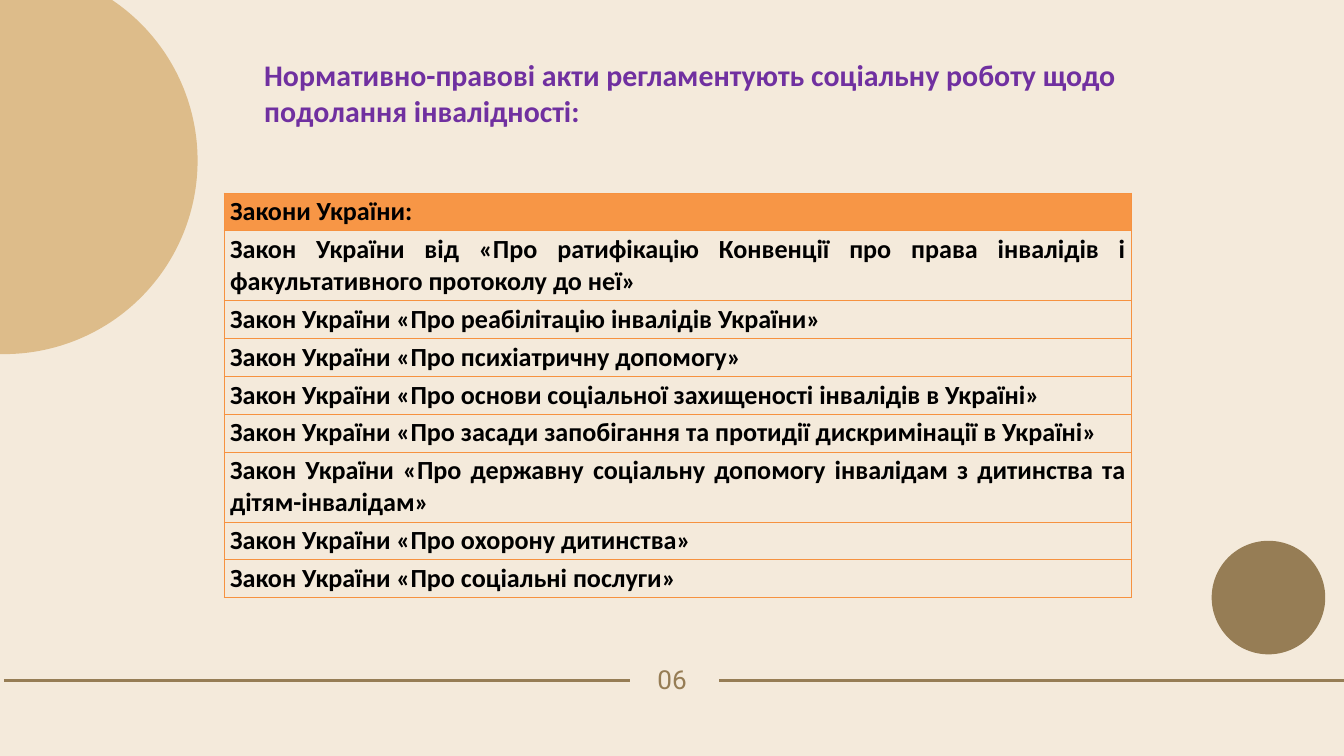
"""Build the slide listing the Ukrainian laws on disability."""
from pptx import Presentation
from pptx.dml.color import RGBColor
from pptx.enum.shapes import MSO_CONNECTOR, MSO_SHAPE
from pptx.enum.text import MSO_ANCHOR, PP_ALIGN
from pptx.oxml import parse_xml
from pptx.oxml.ns import nsdecls
from pptx.util import Pt

STRAIGHT = MSO_CONNECTOR.STRAIGHT
OVAL = MSO_SHAPE.OVAL
TOP = MSO_ANCHOR.TOP
LEFT, CENTER, JUSTIFY = PP_ALIGN.LEFT, PP_ALIGN.CENTER, PP_ALIGN.JUSTIFY

BROWN, SAND, ORANGE = "967D55", "DDBC8A", "F69240"
ROW_H, LINE_H = 40.6, 34.2
LAWS = [
    ("Закони України:", 1),
    ("Закон України від «Про ратифікацію Конвенції про права інвалідів і "
     "факультативного протоколу до неї»", 2),
    ("Закон України «Про реабілітацію інвалідів України»", 1),
    ("Закон України «Про психіатричну допомогу»", 1),
    ("Закон України «Про основи соціальної захищеності інвалідів в Україні»", 1),
    ("Закон України «Про засади запобігання та протидії дискримінації в Україні»", 1),
    ("Закон України «Про державну соціальну допомогу інвалідам з дитинства та "
     "дітям-інвалідам»", 2),
    ("Закон України «Про охорону дитинства»", 1),
    ("Закон України «Про соціальні послуги»", 1),
]


def rgb(color):
    return RGBColor.from_string(color)


def add_run(p, text, size, font, color, bold=False):
    r = p.add_run()
    r.text = text
    r.font.size = Pt(size)
    r.font.name = font
    r.font.bold = bold
    r.font.color.rgb = rgb(color)


prs = Presentation()
prs.slide_width, prs.slide_height = Pt(1440), Pt(810)
s = prs.slides.add_slide(prs.slide_layouts[5])
s.background.fill.solid()
s.background.fill.fore_color.rgb = rgb("F4EADB")

page = s.shapes.add_textbox(Pt(459.4), Pt(716.4), Pt(521.3), Pt(28))
tf = page.text_frame
tf.word_wrap = True
tf.margin_left = tf.margin_right = tf.margin_top = tf.margin_bottom = 0
p = tf.paragraphs[0]
p.alignment = CENTER
p.line_spacing = Pt(28)
add_run(p, "06", 28, "Roboto", BROWN)

for x1, x2 in [(770.4, 1440), (4.3, 674.6)]:
    line = s.shapes.add_connector(STRAIGHT, Pt(x1), Pt(728.8), Pt(x2), Pt(728.8))
    line.line.color.rgb = rgb(BROWN)
    line.line.width = Pt(3)
    line._element.spPr.append(parse_xml(f"<a:effectLst {nsdecls('a')}/>"))

for x, y, size, color in [(1298.2, 579.4, 121.7, BROWN), (-203, -35.3, 414.7, SAND)]:
    circle = s.shapes.add_shape(OVAL, Pt(x), Pt(y), Pt(size), Pt(size))
    circle.shadow.inherit = False
    circle.fill.solid()
    circle.fill.fore_color.rgb = rgb(color)
    circle.line.fill.background()

title = s.shapes.title
title.left, title.top, title.width, title.height = Pt(275.8), Pt(56.9), Pt(954), Pt(85)
tf = title.text_frame
tf.word_wrap = True
tf.vertical_anchor = TOP
p = tf.paragraphs[0]
p.alignment = LEFT
add_run(p, "Нормативно-правові акти регламентують соціальну роботу щодо "
        "подолання інвалідності:", 32, "Calibri", "7030A0", True)

height = sum(ROW_H + (lines - 1) * LINE_H for text, lines in LAWS)
table = s.shapes.add_table(len(LAWS), 1, Pt(240), Pt(206.6), Pt(972), Pt(height)).table
table.horz_banding = False
for i, (text, lines) in enumerate(LAWS):
    table.rows[i].height = Pt(ROW_H + (lines - 1) * LINE_H)
    cell = table.cell(i, 0)
    cell.margin_left = cell.margin_right = Pt(6.5)
    cell.margin_top = cell.margin_bottom = Pt(3.2)
    p = cell.text_frame.paragraphs[0]
    p.alignment = JUSTIFY
    add_run(p, text, 28, "Calibri", "000000", True)
    tcPr = cell._tc.get_or_add_tcPr()
    for side in ("lnL", "lnR", "lnT", "lnB"):
        tcPr.append(parse_xml(
            f'<a:{side} {nsdecls("a")} w="{Pt(0.75)}"><a:solidFill>'
            f'<a:srgbClr val="{ORANGE}"/></a:solidFill></a:{side}>'))
    if i == 0:
        cell.fill.solid()
        cell.fill.fore_color.rgb = rgb("F79646")
    else:
        cell.fill.background()

prs.save("out.pptx")
